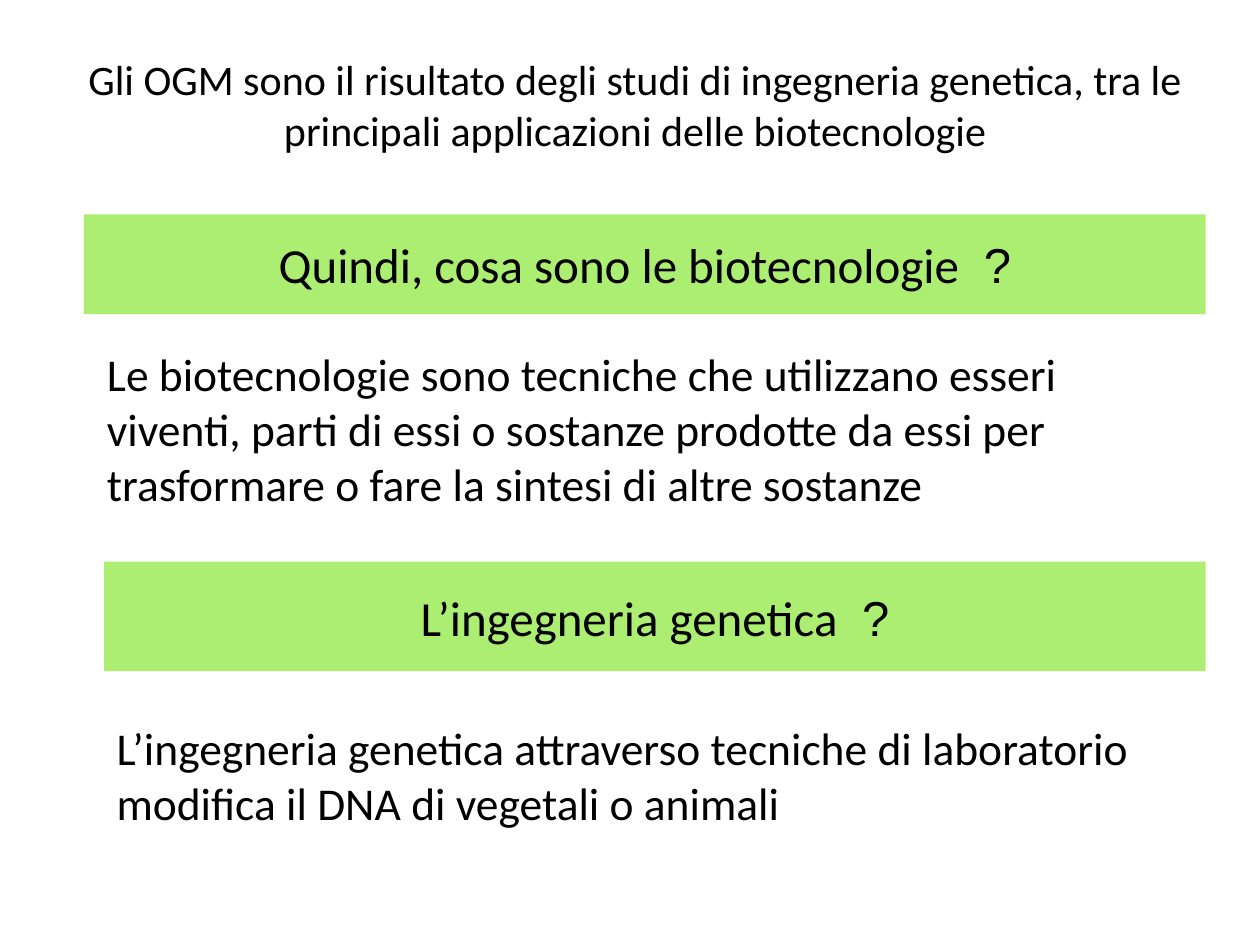
from pptx import Presentation
from pptx.dml.color import RGBColor
from pptx.enum.shapes import MSO_SHAPE as Shape
from pptx.enum.text import MSO_ANCHOR as Anchor, MSO_AUTO_SIZE as AutoSize, PP_ALIGN as Align
from pptx.oxml.ns import qn
from pptx.util import Pt
from lxml.etree import SubElement

BLACK = "000000"
GREEN = "7AE41A"
GREEN_OPACITY = 62


def color(hex_code):
    """Return the colour for a hex string."""
    return RGBColor.from_string(hex_code)


def format_text(frame, size, align):
    """Apply the shared text style to the frame's only paragraph."""
    frame.word_wrap = True
    frame.auto_size = AutoSize.NONE
    frame.vertical_anchor = Anchor.MIDDLE
    paragraph = frame.paragraphs[0]
    paragraph.alignment = align
    paragraph.font.name = "Calibri"
    paragraph.font.size = Pt(size)
    paragraph.font.color.rgb = color(BLACK)
    return paragraph


def place_title(slide, box, wording):
    """Fill the title placeholder and move it to the box."""
    title = slide.shapes.title
    title.left, title.top, title.width, title.height = map(Pt, box)
    title.text_frame.text = wording
    format_text(title.text_frame, 24, Align.CENTER)


def add_question(slide, box, topic):
    """Add a translucent green band that asks about a topic."""
    band = slide.shapes.add_shape(Shape.RECTANGLE, *map(Pt, box))
    band.shadow.inherit = False
    band.line.fill.background()
    band.fill.solid()
    band.fill.fore_color.rgb = color(GREEN)
    green = band.fill._xPr.find(qn("a:solidFill"))[0]
    SubElement(green, qn("a:alpha"), val=str(GREEN_OPACITY * 1000))
    paragraph = format_text(band.text_frame, 28, Align.CENTER)
    paragraph.add_run().text = topic + " "
    question_mark = paragraph.add_run()
    question_mark.text = " ?"
    question_mark.font.name = "Arial"


def add_answer(slide, box, wording):
    """Add a left-aligned definition in the box."""
    answer = slide.shapes.add_textbox(*map(Pt, box))
    answer.text_frame.text = wording
    format_text(answer.text_frame, 26, Align.LEFT)


def main():
    """Build the slide on biotechnologies and save it."""
    deck = Presentation()
    deck.slide_width, deck.slide_height = Pt(720), Pt(540)
    slide = deck.slides.add_slide(deck.slide_layouts[5])
    right = 689
    place_title(
        slide, (42.5, 0, 641, 119),
        "Gli OGM sono il risultato degli studi di ingegneria genetica, "
        "tra le principali applicazioni delle biotecnologie")
    add_question(slide, (48, 122.5, right - 48, 57), "Quindi, cosa sono le biotecnologie")
    add_answer(
        slide, (54, 196.5, right - 54, 96.5),
        "Le biotecnologie sono tecniche che utilizzano esseri viventi, parti di essi "
        "o sostanze prodotte da essi per trasformare o fare la sintesi di altre sostanze")
    add_question(slide, (59.5, 321, right - 59.5, 62.5), "L’ingegneria genetica")
    add_answer(
        slide, (59.5, 406, right - 59.5, 73.5),
        "L’ingegneria genetica attraverso tecniche di laboratorio "
        "modifica il DNA di vegetali o animali")
    deck.save("out.pptx")


if __name__ == "__main__":
    main()
